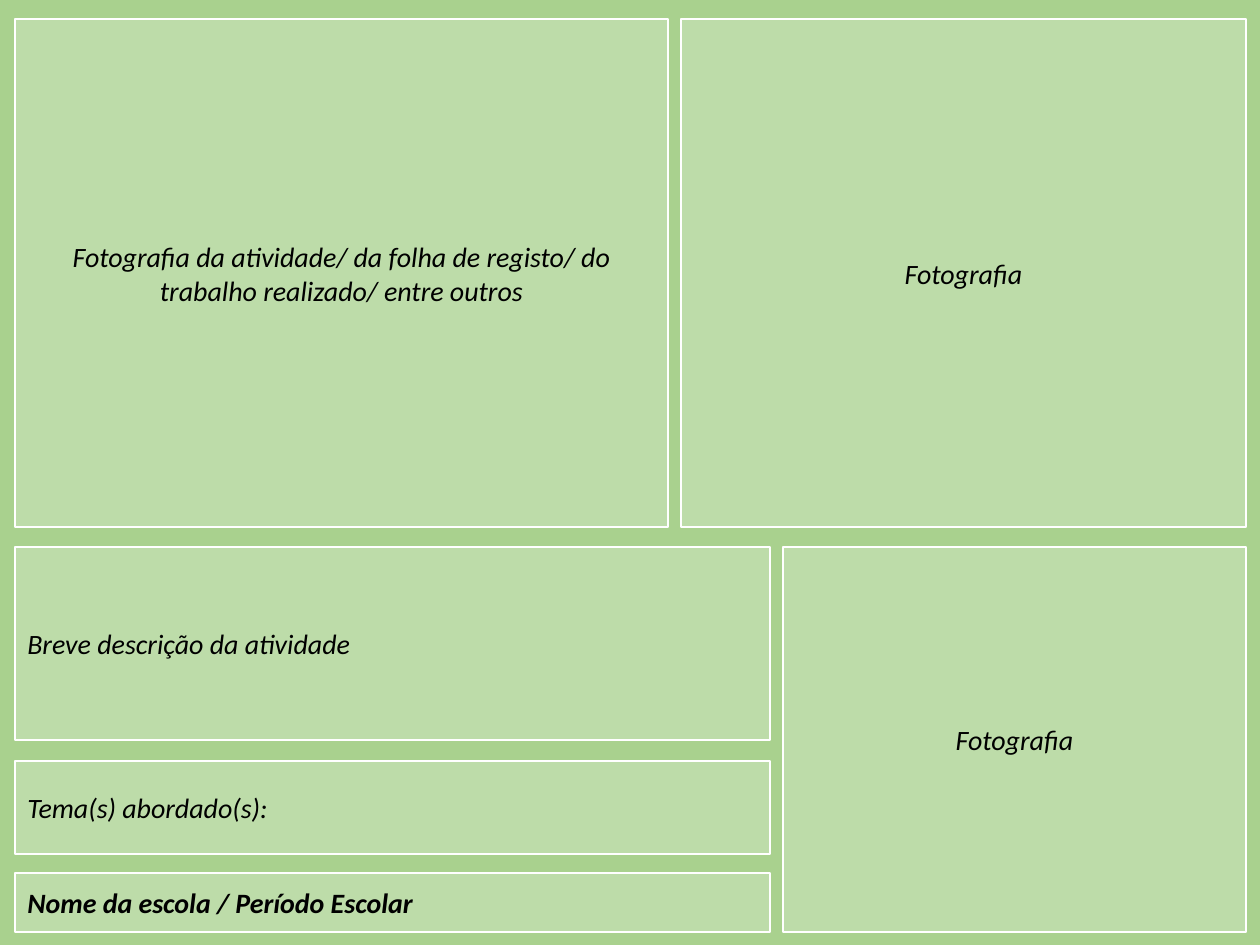
from dataclasses import dataclass

from lxml import etree
from pptx import Presentation
from pptx.dml.color import RGBColor
from pptx.enum.shapes import MSO_SHAPE
from pptx.enum.text import MSO_ANCHOR, PP_ALIGN
from pptx.oxml.ns import qn
from pptx.slide import Slide
from pptx.util import Emu, Pt

RECT = MSO_SHAPE.RECTANGLE
MIDDLE = MSO_ANCHOR.MIDDLE
LEFT, CENTER = PP_ALIGN.LEFT, PP_ALIGN.CENTER

DPI = 126
COLORS = {"back": "A9D18E", "panel": "E2F0D9", "line": "FFFFFF", "text": "000000"}
OPACITY = 36  # percent


@dataclass
class Panel:
    text: str
    left: int
    top: int
    width: int
    height: int
    align: PP_ALIGN = CENTER
    bold: bool = False


def px(n: int) -> Emu:
    return Emu(round(n * 914400 / DPI))


def color(name: str) -> RGBColor:
    return RGBColor.from_string(COLORS[name])


def draw_panel(slide: Slide, panel: Panel) -> None:
    box = slide.shapes.add_shape(
        RECT, px(panel.left), px(panel.top), px(panel.width), px(panel.height)
    )
    box.shadow.inherit = False
    box.line.color.rgb = color("line")
    box.line.width = Pt(1)

    # Translucent fill
    box.fill.solid()
    box.fill.fore_color.rgb = color("panel")
    tint = box.fill._xPr.find(qn("a:solidFill"))[0]
    etree.SubElement(tint, qn("a:alpha")).set("val", str(OPACITY * 1000))

    # Label
    frame = box.text_frame
    frame.word_wrap = True
    frame.vertical_anchor = MIDDLE
    para = frame.paragraphs[0]
    para.text = panel.text
    para.alignment = panel.align
    font = para.font
    font.name = "Calibri"
    font.size = Pt(16)
    font.italic = True
    font.bold = panel.bold
    font.color.rgb = color("text")


# Shared edges of the grid
X, RIGHT = 15, 1246
TOP, TOP_H = 19, 508
LOW, BASE = 547, 932
WIDE = 755
PHOTO_X, SMALL_X = 681, 783

PANELS = [
    # Photos
    Panel(
        "Fotografia da atividade/ da folha de registo/ do trabalho realizado/ entre outros",
        X, TOP, 653, TOP_H,
    ),
    Panel("Fotografia", PHOTO_X, TOP, RIGHT - PHOTO_X, TOP_H),
    Panel("Fotografia", SMALL_X, LOW, RIGHT - SMALL_X, BASE - LOW),
    # Notes
    Panel("Breve descrição da atividade", X, LOW, WIDE, 193, LEFT),
    Panel("Tema(s) abordado(s):", X, 761, WIDE, 93, LEFT),
    Panel("Nome da escola / Período Escolar", X, 873, WIDE, BASE - 873, LEFT, True),
]


def main() -> None:
    deck = Presentation()
    deck.slide_width, deck.slide_height = px(1260), px(945)
    slide = deck.slides.add_slide(deck.slide_layouts[6])
    back = slide.background.fill
    back.solid()
    back.fore_color.rgb = color("back")
    for panel in PANELS:
        draw_panel(slide, panel)
    deck.save("out.pptx")


if __name__ == "__main__":
    main()
